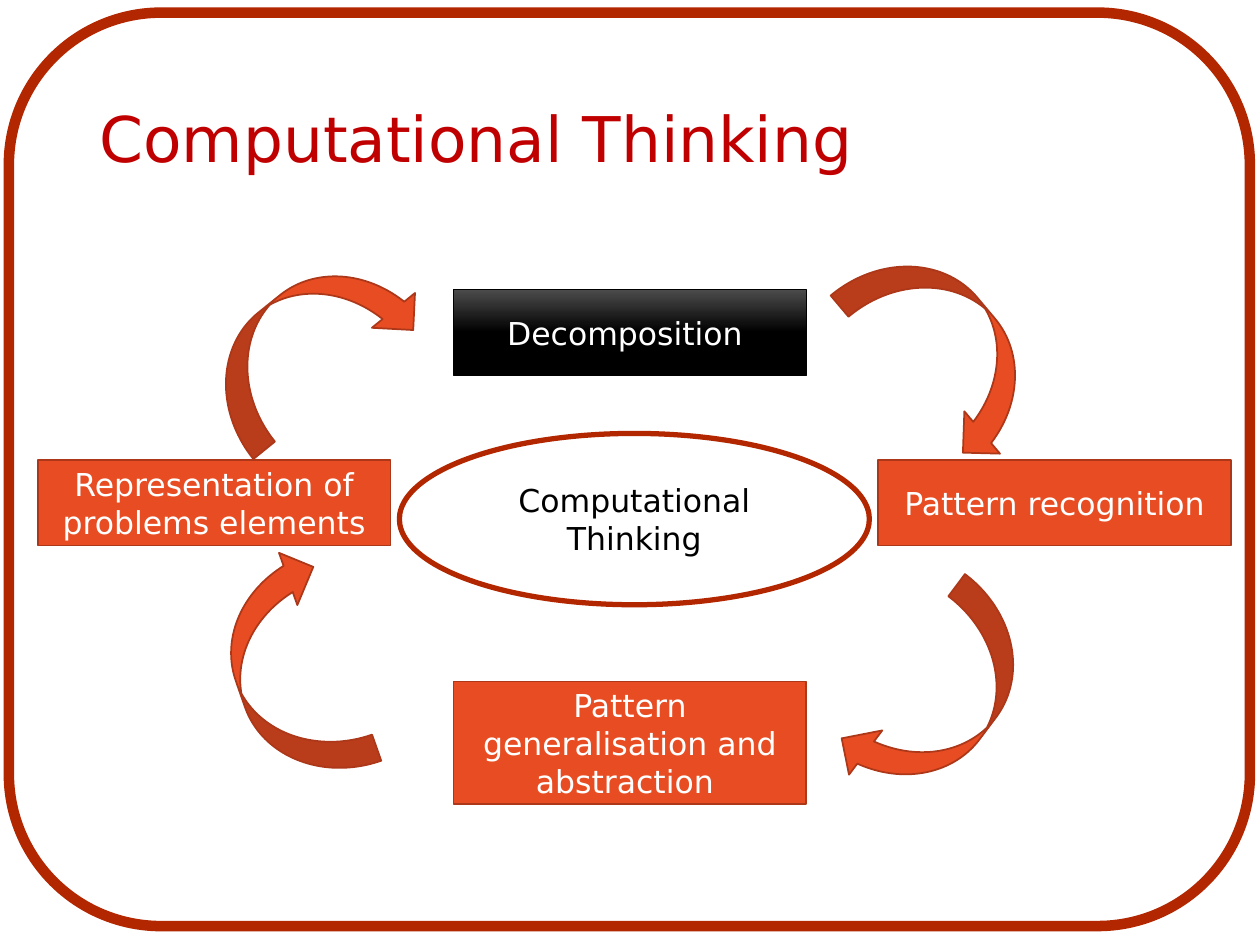
from pptx import Presentation
from pptx.dml.color import RGBColor
from pptx.enum.shapes import MSO_SHAPE
from pptx.enum.text import MSO_ANCHOR, PP_ALIGN
from pptx.util import Inches, Pt

RECT, OVAL = MSO_SHAPE.RECTANGLE, MSO_SHAPE.OVAL
ROUND, ARROW = MSO_SHAPE.ROUNDED_RECTANGLE, MSO_SHAPE.CURVED_DOWN_ARROW
MIDDLE, LEFT, CENTER = MSO_ANCHOR.MIDDLE, PP_ALIGN.LEFT, PP_ALIGN.CENTER

THEME = {
    "font": "DejaVu Sans", "title_size": 36, "label_size": 18,
    "title": "C00000", "frame": "B22600", "box": "E84C22", "edge": "AC3819",
    "white": "FFFFFF", "black": "000000", "shine": "4B4B4B",
}

TITLE = "Computational Thinking"
# text, left, top, height
STEPS = [
    ("Representation of problems elements", 0.3, 3.65, 0.68),
    ("Pattern recognition", 6.97, 3.65, 0.68),
    ("Pattern generalisation and abstraction ", 3.6, 5.41, 0.97),
]
START = ("Decomposition ", 3.6, 2.3, 0.68)
STEP_W = 2.8
# left, top, rotation
ARROWS = [(6.6, 2.33, 49.9), (1.53, 2.28, 321.1),
          (1.38, 4.87, 250.7), (6.53, 5.12, 126.9)]
ARROW_SIZE = (1.85, 0.88)


def color(name):
    return RGBColor.from_string(THEME[name])


def write(shape, text, ink, size="label_size", align=CENTER, spacing=1.0):
    frame = shape.text_frame
    frame.word_wrap = True
    frame.vertical_anchor = MIDDLE
    para = frame.paragraphs[0]
    para.alignment, para.line_spacing = align, spacing
    run = para.add_run()
    run.text = text
    run.font.color.rgb = color(ink)
    look = {"name": THEME["font"], "size": Pt(THEME[size])}
    for key, value in look.items():
        setattr(run.font, key, value)


def draw(slide, kind, place, fill="box", line="edge", width=1):
    shape = slide.shapes.add_shape(kind, *map(Inches, place))
    shape.shadow.inherit = False
    if fill:
        shape.fill.solid()
        shape.fill.fore_color.rgb = color(fill)
    else:
        shape.fill.background()
    shape.line.color.rgb = color(line)
    shape.line.width = Pt(width)
    return shape


def add_step(slide, step, **style):
    text, left, top, height = step
    box = draw(slide, RECT, (left, top, STEP_W, height), **style)
    write(box, text, "white")
    return box


def shade(shape):
    """Fill from a light top edge to black at mid height."""
    shape.fill.gradient()
    shape.fill.gradient_angle = 270
    stops = [(0, "shine"), (0.5, "black")]
    for stop, (place, name) in zip(shape.fill.gradient_stops, stops):
        stop.position = place
        stop.color.rgb = color(name)


def main():
    deck = Presentation()
    deck.slide_width, deck.slide_height = Inches(10), Inches(7.5)
    slide = deck.slides.add_slide(deck.slide_layouts[6])

    draw(slide, ROUND, (0.07, 0.1, 9.85, 7.25), None, "frame", 6)
    title = slide.shapes.add_textbox(*map(Inches, (0.69, 0.4, 8.62, 1.45)))
    write(title, TITLE, "title", "title_size", LEFT, 0.9)

    hub = draw(slide, OVAL, (3.17, 3.44, 3.73, 1.36), "white", "frame", 3)
    write(hub, TITLE, "black")

    for step in STEPS:
        add_step(slide, step)
    shade(add_step(slide, START, line="black", width=0.5))

    for left, top, turn in ARROWS:
        draw(slide, ARROW, (left, top, *ARROW_SIZE)).rotation = turn

    deck.save("out.pptx")


if __name__ == "__main__":
    main()
